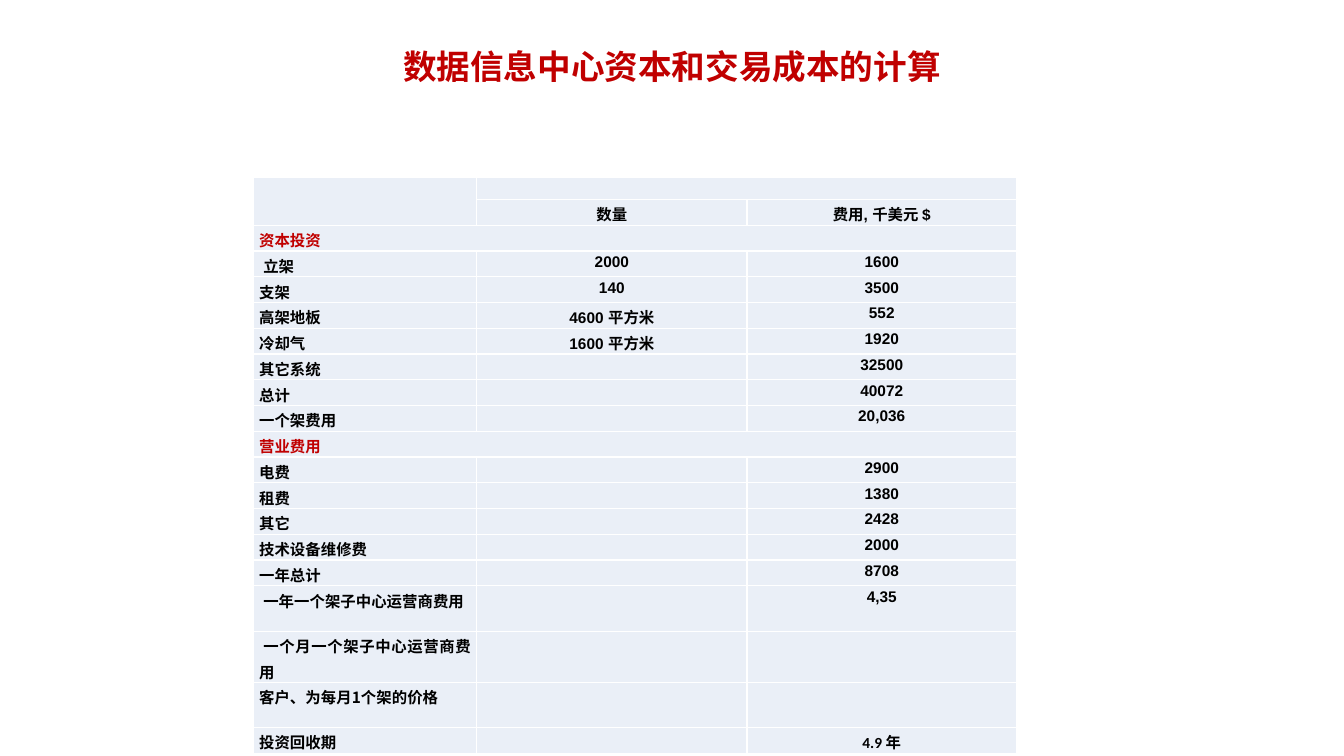
import itertools

import pptx
import pptx.dml.color
import pptx.enum.text
import pptx.oxml
import pptx.oxml.ns
import pptx.util

Pt = pptx.util.Pt
ALIGN = pptx.enum.text.PP_ALIGN
CJK, LATIN = "Noto Sans CJK SC", "Arial"
RED, BLACK, WHITE, PALE = "C00000", "000000", "FFFFFF", "EAEFF7"

COLUMN_WIDTHS = [159.6, 193, 192.6]
HEADER = ["", "数量", "费用, 千美元 $"]
CAPITAL = [
    ("立架", "2000", "1600"),
    ("支架", "140", "3500"),
    ("高架地板", "4600 平方米", "552"),
    ("冷却气", "1600 平方米", "1920"),
    ("其它系统", "", "32500"),
    ("总计", "", "40072"),
    ("一个架费用", "", "20,036"),
]
OPERATING = [
    ("电费", "", "2900"),
    ("租费", "", "1380"),
    ("其它", "", "2428"),
    ("技术设备维修费", "", "2000"),
    ("一年总计", "", "8708"),
    ("一年一个架子中心运营商费用", "", "4,35"),
    ("一个月一个架子中心运营商费用", "", ""),
    ("客户、为每月1个架的价格", "", ""),
    ("投资回收期", "", "4.9 年"),
]
ROWS = [("",), HEADER, ("资本投资",), *CAPITAL, ("营业费用",), *OPERATING]
YEARLY, MONTHLY, PRICE = (row[0] for row in OPERATING[5:8])
HEIGHTS = [15.5] + [18.4] * 15 + [32.4, 36.8, 32, 18.4]
INDENTED = {"立架", YEARLY, MONTHLY}
FONTS = {PRICE: CJK, "4.9 年": "Calibri"}


def rgb(color):
    return pptx.dml.color.RGBColor.from_string(color)


def write(p, text, size=11, color=BLACK, align=ALIGN.CENTER, spacing=1.15,
          font=None, indent=0):
    """Fill a paragraph; without a font, Latin and Chinese parts get their own."""
    p.alignment, p.line_spacing = align, spacing
    if indent:
        p._p.get_or_add_pPr().set("indent", str(Pt(indent)))
    if not text:
        p._p.get_or_add_endParaRPr().set("sz", str(size * 100))
    parts = [(font, text)] if font else [
        (LATIN if ascii_part else CJK, "".join(chars))
        for ascii_part, chars in itertools.groupby(text, str.isascii)]
    for name, part in parts:
        r = p.add_run()
        r.text = part
        r.font.name, r.font.size, r.font.bold = name, Pt(size), True
        r.font.color.rgb = rgb(color)
        ea = pptx.oxml.parse_xml(
            f'<a:ea {pptx.oxml.ns.nsdecls("a")} typeface="{CJK}"/>')
        r.font._element.find(pptx.oxml.ns.qn("a:latin")).addnext(ea)


class SlideBuilder:
    def __init__(self, slide):
        self.s = slide

    def title(self, text, left, top, width, height, lift):
        sp = self.s.shapes.add_textbox(Pt(left), Pt(top), Pt(width), Pt(height))
        tf = sp.text_frame
        tf.word_wrap = True
        tf.vertical_anchor = pptx.enum.text.MSO_ANCHOR.MIDDLE
        tf.margin_bottom = Pt(lift)
        write(tf.paragraphs[0], text, size=24, color=RED, spacing=0.9,
              font="Calibri")

    def style_cell(self, cell):
        cell.margin_left = cell.margin_right = Pt(4.1)
        cell.margin_top = cell.margin_bottom = 0
        tcPr = cell._tc.get_or_add_tcPr()
        for side in ("lnL", "lnR", "lnT", "lnB"):
            tcPr.append(pptx.oxml.parse_xml(
                f'<a:{side} {pptx.oxml.ns.nsdecls("a")} w="{Pt(1)}"><a:solidFill>'
                f'<a:srgbClr val="{WHITE}"/></a:solidFill></a:{side}>'))
        cell.fill.solid()
        cell.fill.fore_color.rgb = rgb(PALE)

    def cost_table(self, left, top):
        table = self.s.shapes.add_table(
            len(ROWS), len(COLUMN_WIDTHS), Pt(left), Pt(top),
            Pt(sum(COLUMN_WIDTHS)), Pt(sum(HEIGHTS))).table
        table.first_row = table.horz_banding = False
        for column, width in zip(table.columns, COLUMN_WIDTHS):
            column.width = Pt(width)
        for i, (row, height) in enumerate(zip(ROWS, HEIGHTS)):
            table.rows[i].height = Pt(height)
            section = len(row) == 1
            for j in range(len(COLUMN_WIDTHS)):
                cell = table.cell(i, j)
                self.style_cell(cell)
                text = row[j] if j < len(row) else ""
                label = ALIGN.LEFT if section else ALIGN.JUSTIFY
                write(cell.text_frame.paragraphs[0], text,
                      color=RED if section else BLACK,
                      align=ALIGN.CENTER if j else label,
                      font=FONTS.get(text), indent=3 if text in INDENTED else 0)
            if section and row[0]:
                table.cell(i, 0).merge(table.cell(i, 2))
        table.cell(0, 0).merge(table.cell(1, 0))
        table.cell(0, 1).merge(table.cell(0, 2))


def main():
    prs = pptx.Presentation()
    prs.slide_width, prs.slide_height = Pt(960), Pt(540)
    builder = SlideBuilder(prs.slides.add_slide(prs.slide_layouts[6]))
    builder.title("数据信息中心资本和交易成本的计算", 66, -6.5, 828, 139.7, lift=32)
    builder.cost_table(181, 127)
    prs.save("out.pptx")


if __name__ == "__main__":
    main()
